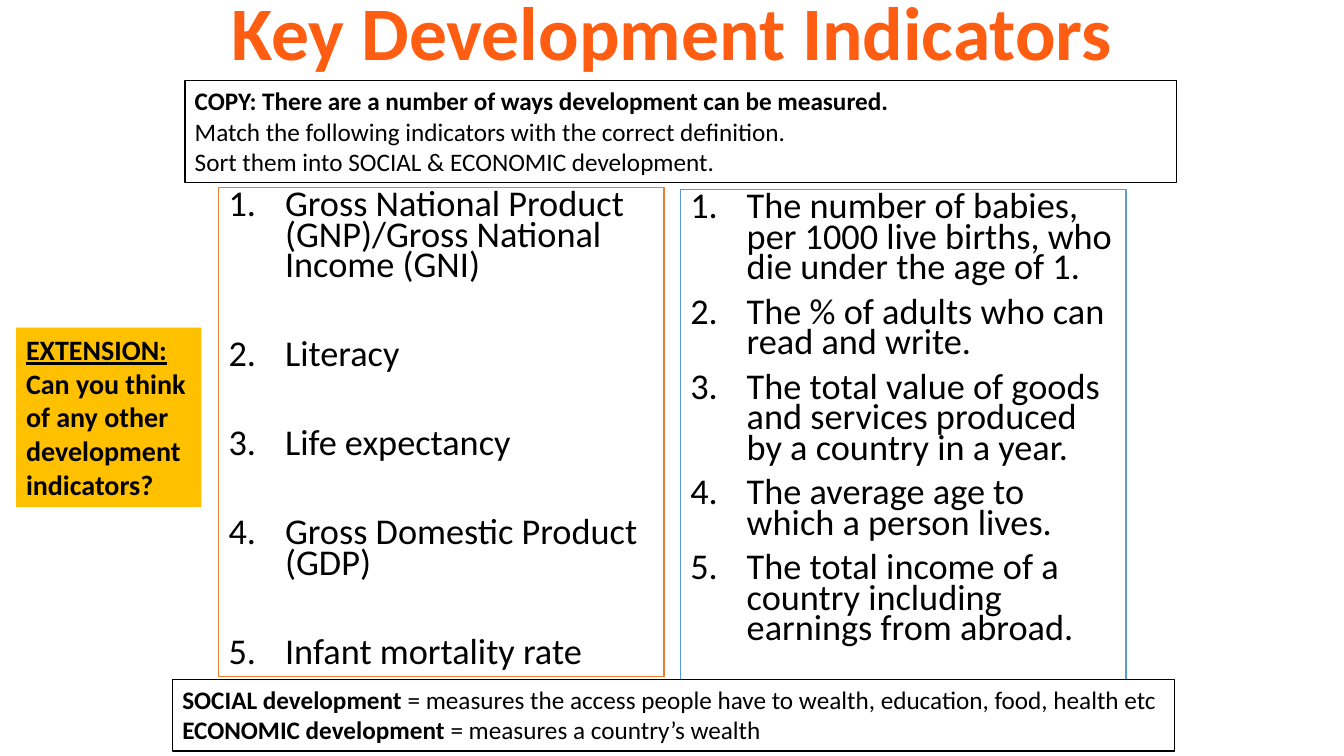
from pptx import Presentation
from pptx.dml.color import RGBColor
from pptx.enum.shapes import MSO_SHAPE
from pptx.enum.text import MSO_ANCHOR, PP_ALIGN
from pptx.util import Inches, Pt
from lxml.etree import SubElement
from pptx.oxml.ns import qn

BLACK = RGBColor(0x00, 0x00, 0x00)
WHITE = RGBColor(0xFF, 0xFF, 0xFF)
TITLE_ORANGE = RGBColor(0xFF, 0x5D, 0x12)
BORDER_ORANGE = RGBColor(0xED, 0x7D, 0x31)
BORDER_BLUE = RGBColor(0x5B, 0x9B, 0xD5)
AMBER = RGBColor(0xFF, 0xC0, 0x00)

deck = Presentation()
deck.slide_width, deck.slide_height = Inches(13.33), Inches(7.5)
slide = deck.slides.add_slide(deck.slide_layouts[6])

# Grid of 80 columns by 45 rows
COLUMN = deck.slide_width / 80
ROW = deck.slide_height / 45


def add_panel(left, top, width, height, fill, border):
    panel = slide.shapes.add_shape(
        MSO_SHAPE.RECTANGLE, round(left * COLUMN), round(top * ROW),
        round(width * COLUMN), round(height * ROW))
    panel.shadow.inherit = False
    panel.fill.solid()
    panel.fill.fore_color.rgb = fill
    if border is None:
        panel.line.fill.background()
    else:
        panel.line.color.rgb = border
        panel.line.width = Pt(1)
    panel.text_frame.word_wrap = True
    panel.text_frame.vertical_anchor = MSO_ANCHOR.TOP
    return panel.text_frame


def style(paragraph, size, color=BLACK, align=PP_ALIGN.LEFT):
    paragraph.alignment = align
    for run in paragraph.runs:
        run.font.name = "Calibri"
        run.font.size = Pt(size)
        run.font.color.rgb = color


# Title
title = slide.shapes.add_textbox(
    round(12.72 * COLUMN), round(-1.2 * ROW),
    round(54.54 * COLUMN), round(6.06 * ROW)).text_frame
title.word_wrap = True
title.text = "Key Development Indicators"
style(title.paragraphs[0], 54, TITLE_ORANGE, PP_ALIGN.CENTER)
title.paragraphs[0].runs[0].font.bold = True

# Numbered lists: indicators and definitions to match
indicators = [
    "Gross National Product (GNP)/Gross National Income (GNI)",
    "Literacy",
    "Life expectancy",
    "Gross Domestic Product (GDP)",
    "Infant mortality rate",
]
definitions = [
    "The number of babies, per 1000 live births, who die under the age of 1.",
    "The % of adults who can read and write.",
    "The total value of goods and services produced by a country in a year.",
    "The average age to which a person lives.",
    "The total income of a country including earnings from abroad.",
]
for left, top, height, border, gap, entries in [
    (13.02, 11.16, 29.1, BORDER_ORANGE, 41.8, indicators),
    (40.5, 11.28, 30.3, BORDER_BLUE, 10, definitions),
]:
    numbered = add_panel(left, top, 26.52, height, WHITE, border)
    numbered.text = "\n".join(entries)
    for position, entry in enumerate(numbered.paragraphs):
        properties = entry._p.get_or_add_pPr()
        properties.set("marL", str(Inches(0.56)))
        properties.set("indent", str(-Inches(0.56)))
        SubElement(properties, qn("a:buFont"), typeface="+mj-lt")
        SubElement(properties, qn("a:buAutoNum"), type="arabicPeriod")
        entry.line_spacing = 0.7
        entry.space_before = Pt(gap if position else 0)
        style(entry, 25.9)

# Task instructions
task = add_panel(11, 4.8, 59.04, 6.06, WHITE, BLACK)
task.text = (
    "COPY: There are a number of ways development can be measured.\n"
    "Match the following indicators with the correct definition.\n"
    "Sort them into SOCIAL & ECONOMIC development.")
for instruction in task.paragraphs:
    style(instruction, 18)
task.paragraphs[0].runs[0].font.bold = True

# Meaning of social and economic development
meanings = add_panel(10.26, 40.44, 59.64, 4.26, WHITE, BLACK)
meanings.text = "SOCIAL development \nECONOMIC development "
explanations = [
    "= measures the access people have to wealth, education, food, health etc",
    "= measures a country’s wealth",
]
for meaning, explanation in zip(meanings.paragraphs, explanations):
    meaning.runs[0].font.bold = True
    meaning.add_run().text = explanation
    style(meaning, 18)

# Extension question
extension = add_panel(0.96, 19.5, 11.04, 10.68, AMBER, None)
extension.text = (
    "EXTENSION:\nCan you think of any other development indicators?")
for line in extension.paragraphs:
    style(line, 20)
    line.runs[0].font.bold = True
extension.paragraphs[0].runs[0].font.underline = True

deck.save("out.pptx")
